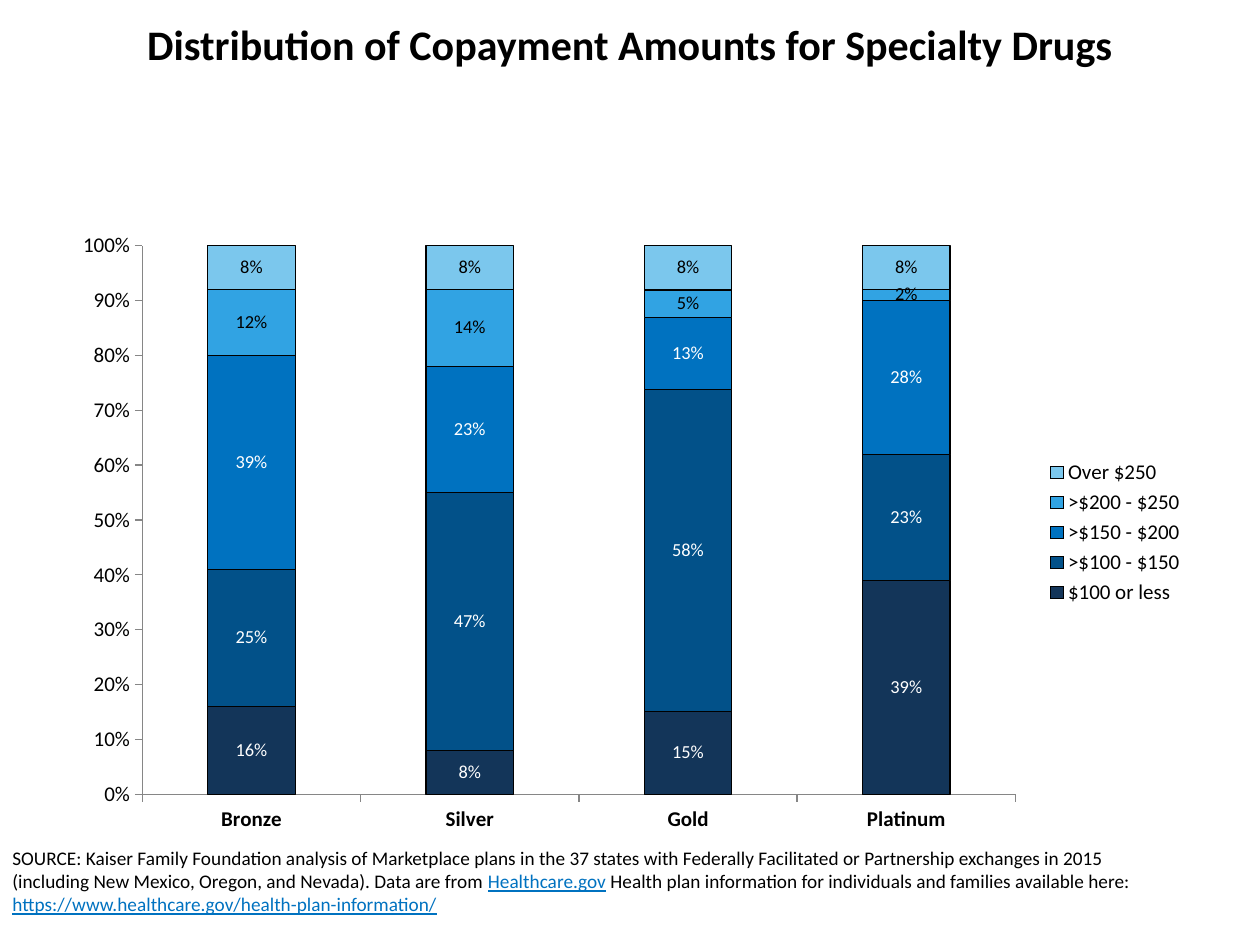
from dataclasses import dataclass

from lxml import etree
from pptx import Presentation
from pptx import util as u
from pptx.chart.data import CategoryChartData
from pptx.dml.color import RGBColor
from pptx.enum import chart as charts, text
from pptx.oxml.ns import qn


@dataclass(frozen=True)
class Theme:
    font: str = "Calibri"
    ink: str = "000000"
    light: str = "FFFFFF"
    axis: str = "868686"
    link: str = "0072C0"
    title_size: float = 24
    chart_size: float = 12
    label_size: float = 10.5
    source_size: float = 11


THEME = Theme()

TIERS = ["Bronze", "Silver", "Gold", "Platinum"]
# name, share per tier, fill, label colour
COPAYMENTS = [
    ("$100 or less", (0.16, 0.08, 0.15, 0.39), "133559", THEME.light),
    (">$100 - $150", (0.25, 0.47, 0.58, 0.23), "025189", THEME.light),
    (">$150 - $200", (0.39, 0.23, 0.13, 0.28), "0072C0", THEME.light),
    (">$200 - $250", (0.12, 0.14, 0.05, 0.02), "31A3E3", THEME.ink),
    ("Over $250", (0.08, 0.08, 0.08, 0.08), "7BC7ED", THEME.ink),
]
# text, whether it is styled as a link
SOURCE = [
    ("SOURCE: Kaiser Family Foundation analysis of Marketplace plans in the 37 states "
     "with Federally Facilitated or Partnership exchanges in 2015 (including New Mexico, "
     "Oregon, and Nevada). Data are from ", False),
    ("Healthcare.gov", True),
    (" Health plan information for individuals and families available here: ", False),
    ("https://www.healthcare.gov/health-plan-information/", True),
]


def style_font(font, size, color=THEME.ink, bold=False):
    font.name = THEME.font
    font.size = u.Pt(size)
    font.bold = bold
    font.color.rgb = RGBColor.from_string(color)


def fill_title(slide, box):
    title = slide.shapes.title
    title.left, title.top, title.width, title.height = box
    frame = title.text_frame
    frame.text = "Distribution of Copayment Amounts for Specialty Drugs"
    frame.vertical_anchor = text.MSO_ANCHOR.TOP
    paragraph = frame.paragraphs[0]
    paragraph.alignment = text.PP_ALIGN.CENTER
    style_font(paragraph.font, THEME.title_size, bold=True)


def set_plot_layout(chart, **fractions):
    """Fix the inner plot area as fractions of the chart."""
    plot_area = chart._chartSpace.chart.plotArea
    for old in plot_area.findall(qn("c:layout")):
        plot_area.remove(old)
    layout = etree.Element(qn("c:layout"))
    manual = etree.SubElement(layout, qn("c:manualLayout"))
    settings = {"layoutTarget": "inner", "xMode": "edge", "yMode": "edge", **fractions}
    for name, value in settings.items():
        etree.SubElement(manual, qn(f"c:{name}")).set("val", str(value))
    plot_area.insert(0, layout)


def style_axis(axis, bold=False):
    axis.has_major_gridlines = False
    axis.major_tick_mark = charts.XL_TICK_MARK.OUTSIDE
    axis.minor_tick_mark = charts.XL_TICK_MARK.NONE
    axis.format.line.color.rgb = RGBColor.from_string(THEME.axis)
    style_font(axis.tick_labels.font, THEME.chart_size, bold=bold)


def style_series(series, fill, label_color):
    series.format.fill.solid()
    series.format.fill.fore_color.rgb = RGBColor.from_string(fill)
    series.format.line.color.rgb = RGBColor.from_string(THEME.ink)
    series.format.line.width = u.Pt(0.75)
    labels = series.data_labels
    labels.show_value = True
    labels.number_format = "0%"
    labels.number_format_is_linked = False
    labels.position = charts.XL_LABEL_POSITION.CENTER
    style_font(labels.font, THEME.label_size, label_color)


def add_copayment_chart(slide, box):
    data = CategoryChartData(number_format="0%")
    data.categories = TIERS
    for name, shares, _, _ in COPAYMENTS:
        data.add_series(name, shares)
    chart = slide.shapes.add_chart(
        charts.XL_CHART_TYPE.COLUMN_STACKED_100, *box, data).chart
    chart.has_title = False
    style_font(chart.font, THEME.chart_size)

    plot = chart.plots[0]
    plot.gap_width, plot.overlap = 150, 100
    plot.vary_by_categories = False
    for series, (_, _, fill, label_color) in zip(plot.series, COPAYMENTS):
        style_series(series, fill, label_color)

    style_axis(chart.category_axis, bold=True)
    value_axis = chart.value_axis
    style_axis(value_axis)
    value_axis.minimum_scale, value_axis.maximum_scale = 0, 1
    value_axis.major_unit = 0.1
    value_axis.tick_labels.number_format = "0%"
    value_axis.tick_labels.number_format_is_linked = False

    chart.has_legend = True
    chart.legend.position = charts.XL_LEGEND_POSITION.RIGHT
    chart.legend.include_in_layout = False
    style_font(chart.legend.font, THEME.chart_size)
    set_plot_layout(chart, x=0.07, y=0.04, w=0.77, h=0.88)


def add_source(slide, box):
    frame = slide.shapes.add_textbox(*box).text_frame
    frame.word_wrap = True
    paragraph = frame.paragraphs[0]
    style_font(paragraph.font, THEME.source_size)
    for words, is_link in SOURCE:
        run = paragraph.add_run()
        run.text = words
        if is_link:
            run.font.underline = True
            run.font.color.rgb = RGBColor.from_string(THEME.link)


def box_cm(*lengths):
    return [u.Cm(length) for length in lengths]


def main():
    presentation = Presentation()
    presentation.slide_width, presentation.slide_height = box_cm(25.4, 19.05)
    title_only = presentation.slide_layouts[5]
    slide = presentation.slides.add_slide(title_only)
    add_source(slide, box_cm(0, 16.94, 23.5, 2.13))
    fill_title(slide, box_cm(0.25, 0.25, 24.9, 2.54))
    add_copayment_chart(slide, box_cm(1.27, 4.45, 22.86, 12.57))
    presentation.save("out.pptx")


if __name__ == "__main__":
    main()
